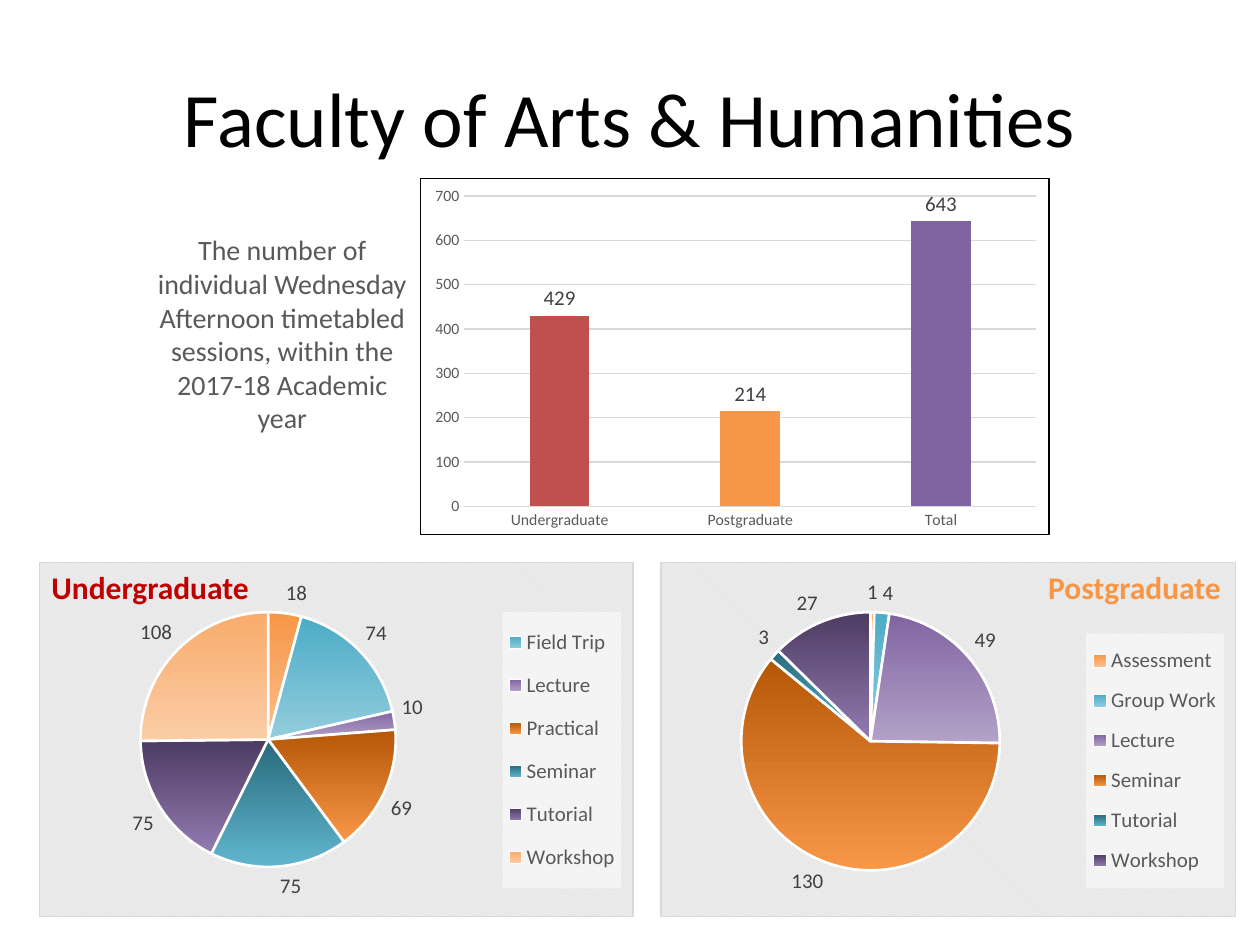
from dataclasses import dataclass

from lxml.etree import fromstring
from pptx import Presentation
from pptx.chart.chart import Chart
from pptx.chart.data import CategoryChartData
from pptx.dml.color import RGBColor
from pptx.enum.chart import XL_CHART_TYPE, XL_LABEL_POSITION, XL_LEGEND_POSITION, XL_TICK_MARK
from pptx.enum.text import MSO_ANCHOR, PP_ALIGN
from pptx.oxml.ns import nsdecls, qn
from pptx.slide import Slide
from pptx.util import Inches, Pt

FONT = "Calibri"
BLACK = RGBColor(0x00, 0x00, 0x00)
WHITE = RGBColor(0xFF, 0xFF, 0xFF)
GREY = RGBColor(0x59, 0x59, 0x59)
LABEL_GREY = RGBColor(0x40, 0x40, 0x40)
LINE_GREY = RGBColor(0xD9, 0xD9, 0xD9)
PATTERN_GREY = RGBColor(0xE6, 0xE6, 0xE6)
LEGEND_GREY = RGBColor(0xF4, 0xF4, 0xF4)
RED = RGBColor(0xC0, 0x00, 0x00)
ORANGE = RGBColor(0xF7, 0x96, 0x46)
PURPLE = RGBColor(0x80, 0x64, 0xA2)
BRICK = RGBColor(0xC0, 0x50, 0x4D)
COLUMN_COLOURS = (BRICK, ORANGE, PURPLE)
SLICE_GRADIENTS = (
    (ORANGE, RGBColor(0xFA, 0xC0, 0x90)),
    (RGBColor(0x4B, 0xAC, 0xC6), RGBColor(0x93, 0xCD, 0xDD)),
    (PURPLE, RGBColor(0xB3, 0xA2, 0xC7)),
    (RGBColor(0xB6, 0x57, 0x08), RGBColor(0xF7, 0x97, 0x47)),
    (RGBColor(0x27, 0x6A, 0x7C), RGBColor(0x61, 0xB6, 0xCD)),
    (RGBColor(0x4D, 0x3B, 0x62), RGBColor(0x93, 0x7B, 0xB0)),
    (RGBColor(0xF9, 0xAB, 0x6B), RGBColor(0xFB, 0xCD, 0xA6)),
)


@dataclass(frozen=True)
class Area:
    left: float
    top: float
    width: float
    height: float

    def lengths(self) -> list[int]:
        return [Inches(side) for side in (self.left, self.top, self.width, self.height)]


@dataclass(frozen=True)
class PiePanel:
    title: str
    colour: RGBColor
    area: Area
    title_area: Area
    plot: Area
    legend: Area
    sessions: dict[str, int]
    hide_first: bool = False


PANELS = (
    PiePanel("Undergraduate", RED, Area(0.31, 4.46, 4.72, 2.82), Area(0.31, 4.46, 1.81, 0.4),
             Area(0.17, 0.14, 0.43, 0.72), Area(0.78, 0.14, 0.2, 0.78),
             {"Assessment": 18, "Field Trip": 74, "Lecture": 10, "Practical": 69,
              "Seminar": 75, "Tutorial": 75, "Workshop": 108}, hide_first=True),
    PiePanel("Postgraduate", ORANGE, Area(5.24, 4.46, 4.57, 2.82), Area(8.22, 4.46, 1.58, 0.4),
             Area(0.14, 0.14, 0.45, 0.73), Area(0.74, 0.2, 0.24, 0.72),
             {"Assessment": 1, "Group Work": 4, "Lecture": 49, "Seminar": 130,
              "Tutorial": 3, "Workshop": 27}),
)


def style_font(font, size: float, colour: RGBColor, bold: bool = False) -> None:
    font.name = FONT
    font.size = Pt(size)
    font.bold = bold
    font.color.rgb = colour


def solid_fill(colour: RGBColor) -> str:
    return f'<a:solidFill><a:srgbClr val="{colour}"/></a:solidFill>'


def shape_properties(fill: str, line: str):
    return fromstring(f'<c:spPr {nsdecls("c", "a")}>{fill}{line}</c:spPr>')


def manual_layout(area: Area, inner: bool):
    target = '<c:layoutTarget val="inner"/>' if inner else ""
    return fromstring(
        f'<c:layout {nsdecls("c")}><c:manualLayout>{target}'
        '<c:xMode val="edge"/><c:yMode val="edge"/>'
        f'<c:x val="{area.left}"/><c:y val="{area.top}"/>'
        f'<c:w val="{area.width}"/><c:h val="{area.height}"/>'
        '</c:manualLayout></c:layout>')


def add_chart(slide: Slide, kind: XL_CHART_TYPE, area: Area, plot_area: Area,
              sessions: dict[str, int], fill: str, border: RGBColor) -> Chart:
    data = CategoryChartData()
    data.categories = list(sessions)
    data.add_series("Series 1", list(sessions.values()))
    chart = slide.shapes.add_chart(kind, *area.lengths(), data).chart
    chart.has_title = False
    chart.has_legend = False
    style_font(chart.font, 10, BLACK)
    line = f'<a:ln w="{Pt(0.75)}">{solid_fill(border)}</a:ln>'
    chart_element = chart.element.find(qn("c:chart"))
    chart_element.addnext(shape_properties(fill, line))
    plot_element = chart_element.find(qn("c:plotArea"))
    for layout in plot_element.findall(qn("c:layout")):
        plot_element.remove(layout)
    plot_element.insert(0, manual_layout(plot_area, inner=True))
    plot = chart.plots[0]
    plot.has_data_labels = True
    labels = plot.data_labels
    labels.show_value = True
    labels.show_percentage = False
    labels.position = XL_LABEL_POSITION.OUTSIDE_END
    style_font(labels.font, 12, LABEL_GREY)
    return chart


def add_column_chart(slide: Slide) -> None:
    sessions = {"Undergraduate": 429, "Postgraduate": 214, "Total": 643}
    chart = add_chart(slide, XL_CHART_TYPE.COLUMN_CLUSTERED, Area(3.33, 1.41, 5, 2.84),
                      Area(0.07, 0.05, 0.91, 0.87), sessions, "<a:noFill/>", BLACK)
    plot = chart.plots[0]
    plot.gap_width = 219
    plot.overlap = -27
    plot.vary_by_categories = False
    for index, colour in enumerate(COLUMN_COLOURS):
        fill = plot.series[0].points[index].format.fill
        fill.solid()
        fill.fore_color.rgb = colour
    for axis in (chart.category_axis, chart.value_axis):
        axis.major_tick_mark = XL_TICK_MARK.NONE
        axis.minor_tick_mark = XL_TICK_MARK.NONE
        style_font(axis.tick_labels.font, 9, GREY)
    chart.value_axis.minimum_scale = 0
    chart.value_axis.maximum_scale = 700
    chart.value_axis.major_unit = 100
    chart.value_axis.format.line.fill.background()
    for line in (chart.category_axis.format.line, chart.value_axis.major_gridlines.format.line):
        line.color.rgb = LINE_GREY
        line.width = Pt(0.75)


def add_text(slide: Slide, area: Area, text: str, size: float, colour: RGBColor,
             bold: bool = False, wrap: bool = False, align: PP_ALIGN = PP_ALIGN.LEFT) -> None:
    frame = slide.shapes.add_textbox(*area.lengths()).text_frame
    frame.word_wrap = wrap
    para = frame.paragraphs[0]
    para.alignment = align
    span = para.add_run()
    span.text = text
    style_font(span.font, size, colour, bold)


def add_pie_panel(slide: Slide, panel: PiePanel) -> None:
    pattern = (f'<a:pattFill prst="dkDnDiag"><a:fgClr><a:srgbClr val="{WHITE}"/></a:fgClr>'
               f'<a:bgClr><a:srgbClr val="{PATTERN_GREY}"/></a:bgClr></a:pattFill>')
    chart = add_chart(slide, XL_CHART_TYPE.PIE, panel.area, panel.plot,
                      panel.sessions, pattern, LINE_GREY)
    plot = chart.plots[0]
    plot.vary_by_categories = True
    for index, (start, end) in enumerate(SLICE_GRADIENTS[:len(panel.sessions)]):
        slice_format = plot.series[0].points[index].format
        slice_format.fill.gradient()
        slice_format.fill.gradient_angle = 270
        for stop, colour, position in zip(slice_format.fill.gradient_stops, (start, end), (0, 1)):
            stop.color.rgb = colour
            stop.position = position
        slice_format.line.color.rgb = WHITE
        slice_format.line.width = Pt(1.5)
    chart.has_legend = True
    legend = chart.legend
    legend.position = XL_LEGEND_POSITION.RIGHT
    legend.include_in_layout = False
    style_font(legend.font, 12, GREY)
    overlay = legend._element.find(qn("c:overlay"))
    for layout in legend._element.findall(qn("c:layout")):
        legend._element.remove(layout)
    if panel.hide_first:
        overlay.addprevious(fromstring(
            f'<c:legendEntry {nsdecls("c")}><c:idx val="0"/><c:delete val="1"/></c:legendEntry>'))
    overlay.addprevious(manual_layout(panel.legend, inner=False))
    overlay.addnext(shape_properties(solid_fill(LEGEND_GREY), "<a:ln><a:noFill/></a:ln>"))
    add_text(slide, panel.title_area, panel.title, 18, panel.colour, bold=True)


def main() -> None:
    deck = Presentation()
    deck.slide_width, deck.slide_height = Inches(10), Inches(7.5)
    page = deck.slides.add_slide(deck.slide_layouts[5])
    title = page.shapes.title
    title.left, title.top, title.width, title.height = Area(0.5, 0.3, 9, 1.25).lengths()
    title.text_frame.vertical_anchor = MSO_ANCHOR.MIDDLE
    para = title.text_frame.paragraphs[0]
    para.alignment = PP_ALIGN.CENTER
    span = para.add_run()
    span.text = "Faculty of Arts & Humanities"
    style_font(span.font, 44, BLACK)
    add_column_chart(page)
    add_text(page, Area(1.15, 1.8, 2.18, 1.72),
             "The number of individual Wednesday Afternoon timetabled sessions, "
             "within the 2017-18 Academic year", 16, GREY, wrap=True, align=PP_ALIGN.CENTER)
    for panel in PANELS:
        add_pie_panel(page, panel)
    deck.save("out.pptx")


if __name__ == "__main__":
    main()
